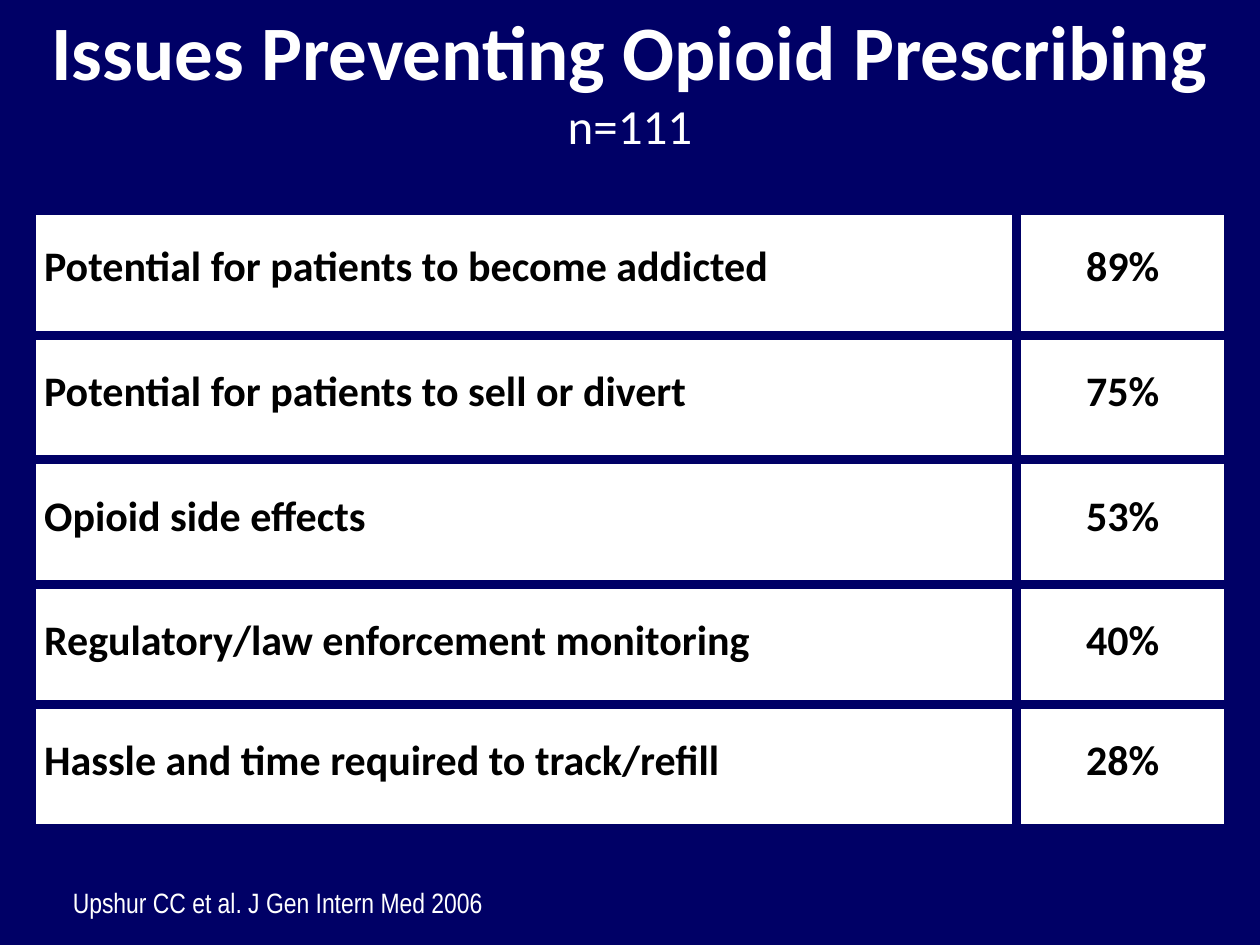
"""Build a slide tabling the issues that prevent opioid prescribing."""
from typing import Any, NamedTuple

import pptx
import pptx.dml.color
import pptx.enum.text
import pptx.oxml
import pptx.oxml.ns
import pptx.util

WIDTH, HEIGHT = 10, 7.5
NAVY, WHITE, BLACK = "000066", "FFFFFF", "000000"
ALIGN = pptx.enum.text.PP_ALIGN
ANCHOR = pptx.enum.text.MSO_ANCHOR
BORDER_POINTS = 6
COLUMN_WIDTHS = (7.82, 1.68)
COLUMN_ALIGNS = (ALIGN.LEFT, ALIGN.CENTER)


class Issue(NamedTuple):
    concern: str
    share: str
    row_height: float = 0.99


class Style(NamedTuple):
    size: float
    color: str = WHITE
    bold: bool = False
    name: str = "Calibri"


class Area(NamedTuple):
    """Shares of the slide's width and height."""

    left: float
    top: float
    width: float
    height: float


ISSUES = (
    Issue("Potential for patients to become addicted", "89%"),
    Issue("Potential for patients to sell or divert", "75%"),
    Issue("Opioid side effects", "53%"),
    Issue("Regulatory/law enforcement monitoring", "40%", 0.95),
    Issue("Hassle and time required to track/refill", "28%"),
)
HEADING = Style(44, bold=True)
SAMPLE = Style(28)
ENTRY = Style(24, BLACK, True)
CITATION = Style(16, name="Arial Narrow")


def rgb(value: str) -> pptx.dml.color.RGBColor:
    """Return the colour for a hex string."""
    return pptx.dml.color.RGBColor.from_string(value)


def apply(target: Any, values: dict[str, Any]) -> None:
    """Set every listed attribute on the target."""
    for key, value in values.items():
        setattr(target, key, value)


def place(area: Area) -> list[int]:
    """Turn slide shares into lengths."""
    sides = (WIDTH, HEIGHT, WIDTH, HEIGHT)
    return [pptx.util.Inches(share * side) for share, side in zip(area, sides)]


def write(paragraph: Any, words: str, style: Style) -> None:
    """Add a styled run to a paragraph."""
    run = paragraph.add_run()
    run.text = words
    apply(run.font, {"size": pptx.util.Pt(style.size), "bold": style.bold, "name": style.name})
    run.font.color.rgb = rgb(style.color)


def add_text(slide: Any, area: Area, lines: list[tuple[str, Style]], **frame_format: Any) -> Any:
    """Add a text box whose lines share one paragraph, and return the paragraph."""
    frame = slide.shapes.add_textbox(*place(area)).text_frame
    apply(frame, {"word_wrap": True, **frame_format})
    paragraph = frame.paragraphs[0]
    for index, (words, style) in enumerate(lines):
        if index:
            paragraph.add_line_break()
        write(paragraph, words, style)
    return paragraph


def add_borders(cell: Any) -> None:
    """Draw all four sides of a cell in the background colour."""
    properties = cell._tc.get_or_add_tcPr()
    for side in "LRTB":
        properties.append(pptx.oxml.parse_xml(
            f'<a:ln{side} {pptx.oxml.ns.nsdecls("a")} w="{pptx.util.Pt(BORDER_POINTS)}">'
            f'<a:solidFill><a:srgbClr val="{NAVY}"/></a:solidFill></a:ln{side}>'
        ))


def fill_cell(cell: Any, words: str, align: Any) -> None:
    """Write one entry into a white cell."""
    add_borders(cell)
    cell.fill.solid()
    cell.fill.fore_color.rgb = rgb(WHITE)
    apply(cell, {"margin_top": pptx.util.Inches(0.25), "vertical_anchor": ANCHOR.TOP})
    paragraph = cell.text_frame.paragraphs[0]
    paragraph.alignment = align
    write(paragraph, words, ENTRY)


def add_issues(slide: Any, area: Area) -> None:
    """Add the table of issues and their shares."""
    table = slide.shapes.add_table(len(ISSUES), len(COLUMN_WIDTHS), *place(area)).table
    apply(table, {"first_row": False, "horz_banding": False})
    for column, width in zip(table.columns, COLUMN_WIDTHS):
        column.width = pptx.util.Inches(width)
    for row, issue in zip(table.rows, ISSUES):
        row.height = pptx.util.Inches(issue.row_height)
        for cell, words, align in zip(row.cells, issue, COLUMN_ALIGNS):
            fill_cell(cell, words, align)


def main() -> None:
    """Build and save the slide."""
    deck = pptx.Presentation()
    apply(deck, {"slide_width": pptx.util.Inches(WIDTH), "slide_height": pptx.util.Inches(HEIGHT)})
    slide = deck.slides.add_slide(deck.slide_layouts[6])
    slide.background.fill.solid()
    slide.background.fill.fore_color.rgb = rgb(NAVY)
    title = add_text(
        slide, Area(0, 0, 1, 1 / 6),
        [("Issues Preventing Opioid Prescribing", HEADING), ("n=111", SAMPLE)],
        vertical_anchor=ANCHOR.MIDDLE,
    )
    title.alignment = ALIGN.CENTER
    add_issues(slide, Area(0.025, 1.67 / HEIGHT, 0.95, 4.91 / HEIGHT))
    add_text(
        slide, Area(0.048, 0.93, 0.36, 0.05),
        [("Upshur CC et al. J Gen Intern Med 2006", CITATION)],
    )
    deck.save("out.pptx")


if __name__ == "__main__":
    main()
